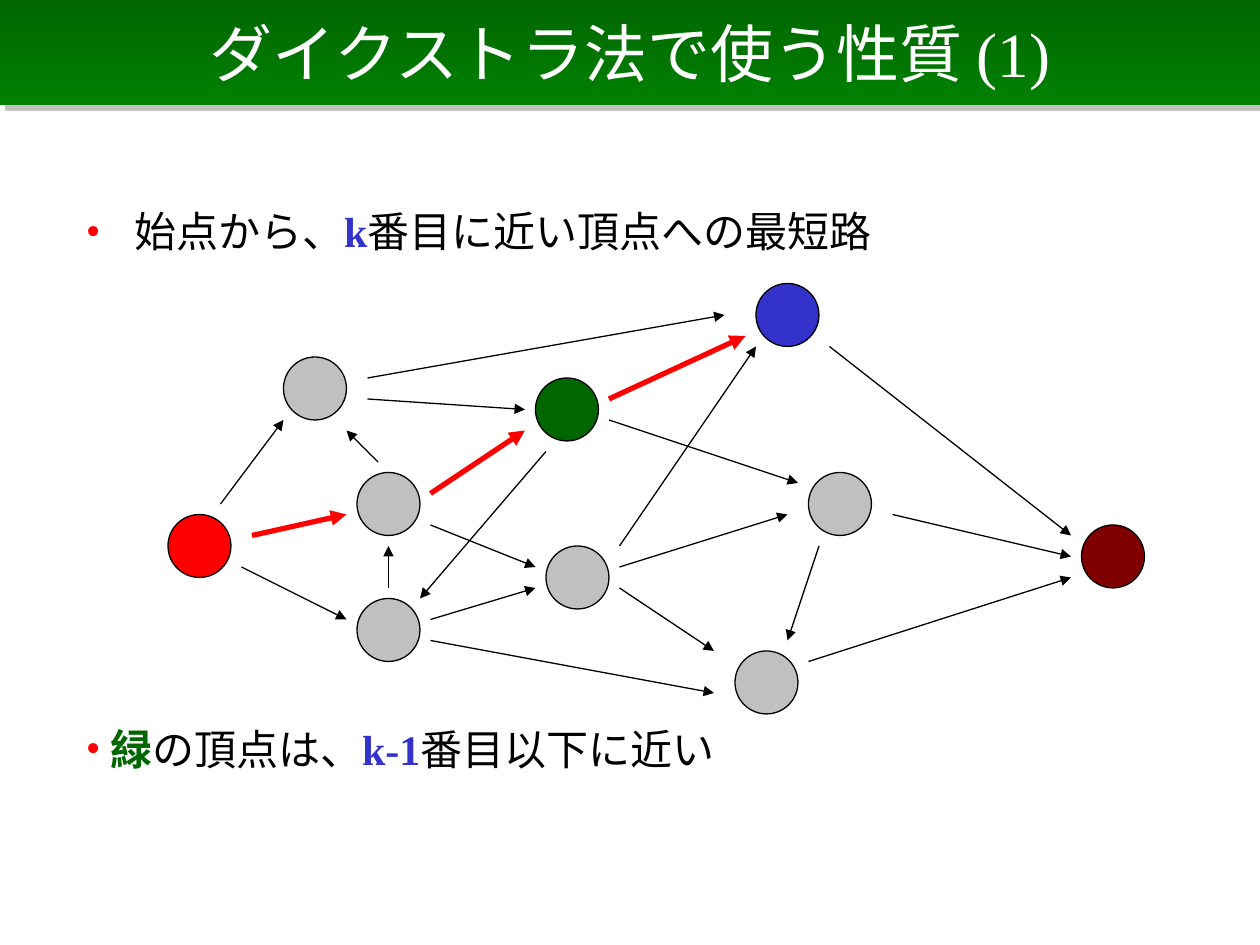
import dataclasses

import lxml.etree
import pptx
import pptx.dml.color
import pptx.enum.shapes
import pptx.enum.text
import pptx.oxml
import pptx.oxml.ns
import pptx.util

PX = 7620
SLIDE = (1200, 900)
HEADER = (0, 0, 1200, 100)
BODY = (70, 190, 1030, 640)
NODE_SIZE = 60


@dataclasses.dataclass(frozen=True)
class Theme:
    font: str = "Times New Roman"
    title_size: int = 36
    body_size: int = 24
    black: str = "000000"
    white: str = "FFFFFF"
    red: str = "FF0000"
    blue: str = "3333CC"
    green: str = "006600"
    light_green: str = "008000"
    gray: str = "C0C0C0"
    maroon: str = "800000"
    shadow: str = "808080"
    thin: float = 0.75
    thick: float = 3


THEME = Theme()

TITLE = "ダイクストラ法で使う性質 (1)"

BULLETS = [
    {"indent": 46, "before": 0, "spans": [
        ("始点から、", THEME.black, False),
        ("k", THEME.blue, True),
        ("番目に近い頂点への最短路", THEME.black, False),
    ]},
    {"indent": 23, "before": 267, "spans": [
        ("緑", THEME.green, True),
        ("の頂点は、", THEME.black, False),
        ("k-1", THEME.blue, True),
        ("番目以下に近い", THEME.black, False),
    ]},
]

NODES = {
    THEME.red: [(160, 490)],
    THEME.green: [(510, 360)],
    THEME.blue: [(720, 270)],
    THEME.maroon: [(1030, 500)],
    THEME.gray: [(270, 340), (340, 450), (340, 570),
                 (520, 520), (770, 450), (700, 620)],
}

PATH_EDGES = [
    (240, 510, 330, 490),
    (410, 470, 500, 410),
    (580, 380, 710, 320),
]

OTHER_EDGES = [
    (210, 480, 270, 400),
    (230, 540, 330, 590),
    (350, 360, 690, 300),
    (350, 380, 500, 390),
    (360, 440, 330, 410),
    (370, 560, 370, 520),
    (410, 500, 510, 540),
    (410, 590, 510, 560),
    (410, 610, 680, 660),
    (520, 430, 400, 570),
    (580, 400, 760, 460),
    (590, 520, 720, 330),
    (590, 540, 750, 490),
    (590, 560, 680, 620),
    (780, 520, 750, 610),
    (790, 330, 1020, 510),
    (850, 490, 1020, 530),
    (770, 630, 1020, 550),
]


def emu(*lengths):
    return [length * PX for length in lengths]


def rgb(value):
    return pptx.dml.color.RGBColor.from_string(value)


def add_child(parent, tag, **attributes):
    child = lxml.etree.SubElement(parent, pptx.oxml.ns.qn(tag))
    for name, value in attributes.items():
        child.set(name, str(value))
    return child


def add_text(para, text, *, size, color, bold=False):
    span = para.add_run()
    span.text = text
    span.font.name = THEME.font
    span.font.size = pptx.util.Pt(size)
    span.font.bold = bold
    span.font.color.rgb = rgb(color)


def add_title(page):
    title = page.shapes.title
    title.left, title.top, title.width, title.height = emu(*HEADER)
    title.fill.gradient()
    title.fill.gradient_angle = 270
    for stop, color in zip(title.fill.gradient_stops, (THEME.green, THEME.light_green)):
        stop.color.rgb = rgb(color)
    effects = add_child(title.element.spPr, "a:effectLst")
    shadow = add_child(effects, "a:outerShdw", blurRad=0, dist=pptx.util.Pt(4.2),
                       dir=2700000, algn="ctr", rotWithShape=0)
    color = add_child(shadow, "a:srgbClr", val=THEME.shadow)
    add_child(color, "a:alpha", val=50000)
    frame = title.text_frame
    frame.auto_size = pptx.enum.text.MSO_AUTO_SIZE.NONE
    frame.vertical_anchor = pptx.enum.text.MSO_ANCHOR.MIDDLE
    para = frame.paragraphs[0]
    para.alignment = pptx.enum.text.PP_ALIGN.CENTER
    add_text(para, TITLE, size=THEME.title_size, color=THEME.white)


def add_bullets(page):
    frame = page.shapes.add_textbox(*emu(*BODY)).text_frame
    frame.word_wrap = True
    for index, bullet in enumerate(BULLETS):
        para = frame.add_paragraph() if index else frame.paragraphs[0]
        para.space_before = pptx.util.Pt(bullet["before"])
        properties = para._p.get_or_add_pPr()
        indent = bullet["indent"] * PX
        properties.set("marL", str(indent))
        properties.set("indent", str(-indent))
        add_child(add_child(properties, "a:buClr"), "a:srgbClr", val=THEME.red)
        add_child(properties, "a:buFont", typeface=THEME.font)
        add_child(properties, "a:buChar", char="•")
        for text, color, bold in bullet["spans"]:
            add_text(para, text, size=THEME.body_size, color=color, bold=bold)


def add_node(page, left, top, color):
    node = page.shapes.add_shape(pptx.enum.shapes.MSO_SHAPE.OVAL,
                                 *emu(left, top, NODE_SIZE, NODE_SIZE))
    node.shadow.inherit = False
    node.fill.solid()
    node.fill.fore_color.rgb = rgb(color)
    node.line.color.rgb = rgb(THEME.black)
    node.line.width = pptx.util.Pt(THEME.thin)


def add_edge(page, ends, color, width):
    edge = page.shapes.add_connector(pptx.enum.shapes.MSO_CONNECTOR.STRAIGHT, *emu(*ends))
    edge.line.color.rgb = rgb(color)
    edge.line.width = pptx.util.Pt(width)
    add_child(edge.line._get_or_add_ln(), "a:tailEnd", type="triangle")
    add_child(edge._element.spPr, "a:effectLst")


def main():
    deck = pptx.Presentation()
    deck.slide_width, deck.slide_height = emu(*SLIDE)
    page = deck.slides.add_slide(deck.slide_layouts.get_by_name("Title Only"))
    add_title(page)
    add_bullets(page)
    for color, places in NODES.items():
        for left, top in places:
            add_node(page, left, top, color)
    for ends in OTHER_EDGES:
        add_edge(page, ends, THEME.black, THEME.thin)
    for ends in PATH_EDGES:
        add_edge(page, ends, THEME.red, THEME.thick)
    deck.save("out.pptx")


if __name__ == "__main__":
    main()
